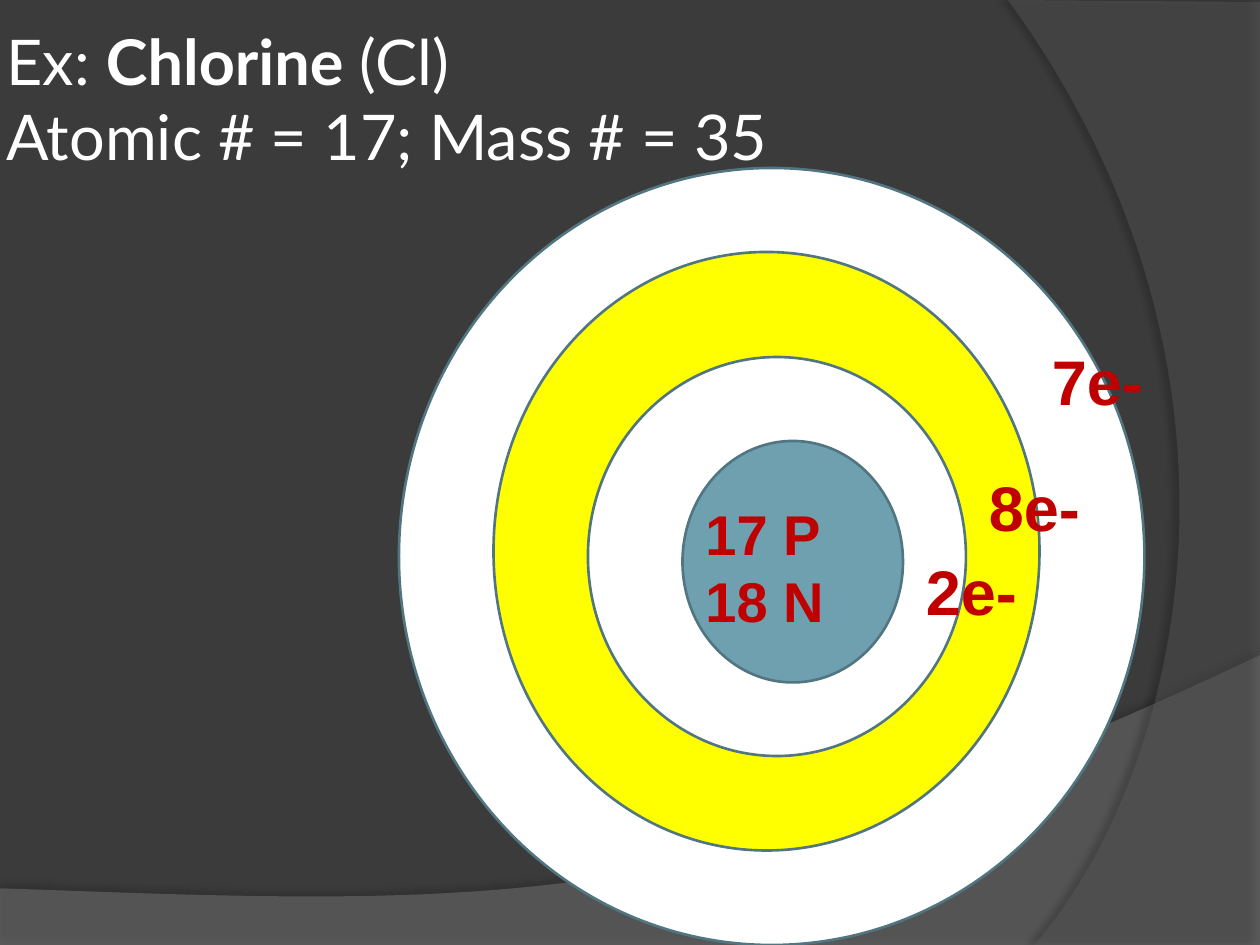
"""Build a slide showing the electron shells of a chlorine atom."""
from lxml.etree import SubElement
from pptx import Presentation
from pptx.dml.color import RGBColor as Color
from pptx.enum.shapes import MSO_SHAPE as Preset
from pptx.enum.text import MSO_ANCHOR as Anchor, MSO_AUTO_SIZE as Fit
from pptx.oxml.ns import qn
from pptx.util import Inches, Pt

THEME = {
    "back": "3B3B3B", "wave": "7F7F7F", "side": "5E5E5E", "shadow": "000000",
    "pale": "FFFFFF", "bright": "FFFF00", "core": "6EA0B0", "rim": "517682",
    "label": "C00000", "title_font": "Lato", "label_font": "Arial",
    "large": 36, "medium": 32, "rim_width": 1.5,
}
COLUMNS, ROWS, CURVE_STEPS = 120, 90, 60

deck = Presentation()
deck.slide_width, deck.slide_height = Inches(10), Inches(7.5)
page = deck.slides.add_slide(deck.slide_layouts[6])
page.background.fill.solid()
page.background.fill.fore_color.rgb = Color.from_string(THEME["back"])


def grid(*cells):
    """Turn alternating columns and rows into slide lengths."""
    steps = (deck.slide_width / COLUMNS, deck.slide_height / ROWS)
    return [round(cell * steps[index % 2]) for index, cell in enumerate(cells)]


def write(area, lines, font, size, color, **frame_format):
    """Add a text box whose lines are lists of (text, bold) spans."""
    box = page.shapes.add_textbox(*grid(*area))
    frame = box.text_frame
    for name, value in {"word_wrap": True, **frame_format}.items():
        setattr(frame, name, value)
    for index, spans in enumerate(lines):
        para = frame.paragraphs[0] if index == 0 else frame.add_paragraph()
        for text, bold in spans:
            span = para.add_run()
            span.text = text
            for name, value in {"name": font, "size": Pt(size), "bold": bold}.items():
                setattr(span.font, name, value)
            span.font.color.rgb = Color.from_string(color)


backdrops = [
    ("wave", 45, [(0, 90), (120, 90)],
     [(120, 62.4), (67.1, 87.5), (46.9, 86.3), (0, 84.6)], (35, 3.5, 270)),
    ("side", 40, [(120, 0.2), (120, 90)],
     [(98.5, 90), (112.2, 74.3), (122.2, 36), (96, 0)], (45, 4, 180)),
]
for color, opacity, corners, curve, (shade, distance, angle) in backdrops:
    points = list(corners)
    for step in range(CURVE_STEPS + 1):
        t = step / CURVE_STEPS
        weights = ((1 - t) ** 3, 3 * t * (1 - t) ** 2, 3 * t ** 2 * (1 - t), t ** 3)
        points.append([sum(w * p[axis] for w, p in zip(weights, curve)) for axis in (0, 1)])
    outline = [grid(*point) for point in points]
    builder = page.shapes.build_freeform(*outline[0])
    builder.add_line_segments(outline[1:], close=True)
    shape = builder.convert_to_shape()
    shape.fill.solid()
    shape.fill.fore_color.rgb = Color.from_string(THEME[color])
    shape.line.fill.background()
    shape.shadow.inherit = False
    properties = shape.element.spPr
    tint = properties.find(qn("a:solidFill")).find(qn("a:srgbClr"))
    SubElement(tint, qn("a:alpha"), val=str(opacity * 1000))
    shadow = SubElement(
        properties.find(qn("a:effectLst")), qn("a:outerShdw"), blurRad=str(Pt(4)),
        dist=str(Pt(distance)), dir=str(angle * 60000), algn="ctr", rotWithShape="0")
    shadow_tint = SubElement(shadow, qn("a:srgbClr"), val=THEME["shadow"])
    SubElement(shadow_tint, qn("a:alpha"), val=str(shade * 1000))

write((0, 2.1, 110, 20.4),
      [[("Ex: ", False), ("Chlorine", True), (" (Cl)", False)],
       [("Atomic # = 17; Mass # = 35", False)]],
      THEME["title_font"], THEME["large"], THEME["pale"],
      vertical_anchor=Anchor.TOP, margin_left=Inches(0.05), margin_right=Inches(0.05),
      margin_top=0, margin_bottom=0)

outer_shells = [((38, 16, 71, 74), "pale"), ((47, 24, 52, 57), "bright")]
inner_shells = [((56, 34, 36, 38), "pale"), ((65, 42, 21, 23), "core")]
for shells, grouped in ((outer_shells, False), (inner_shells, True)):
    holder = page.shapes.add_group_shape().shapes if grouped else page.shapes
    for area, color in shells:
        shell = holder.add_shape(Preset.OVAL, *grid(*area))
        shell.shadow.inherit = False
        shell.fill.solid()
        shell.fill.fore_color.rgb = Color.from_string(THEME[color])
        shell.line.color.rgb = Color.from_string(THEME["rim"])
        shell.line.width = Pt(THEME["rim_width"])

labels = [
    ((66, 47, 15, 14.2), ["17 P", "18 N"], "medium"),
    ((87, 52, 14, 8.5), ["2e-"], "large"),
    ((93, 44, 19, 8.5), ["8e-"], "large"),
    ((99, 32, 12, 8.5), ["7e-"], "large"),
]
for area, lines, size in labels:
    write(area, [[(line, True)] for line in lines], THEME["label_font"], THEME[size],
          THEME["label"], auto_size=Fit.SHAPE_TO_FIT_TEXT)

deck.save("out.pptx")
